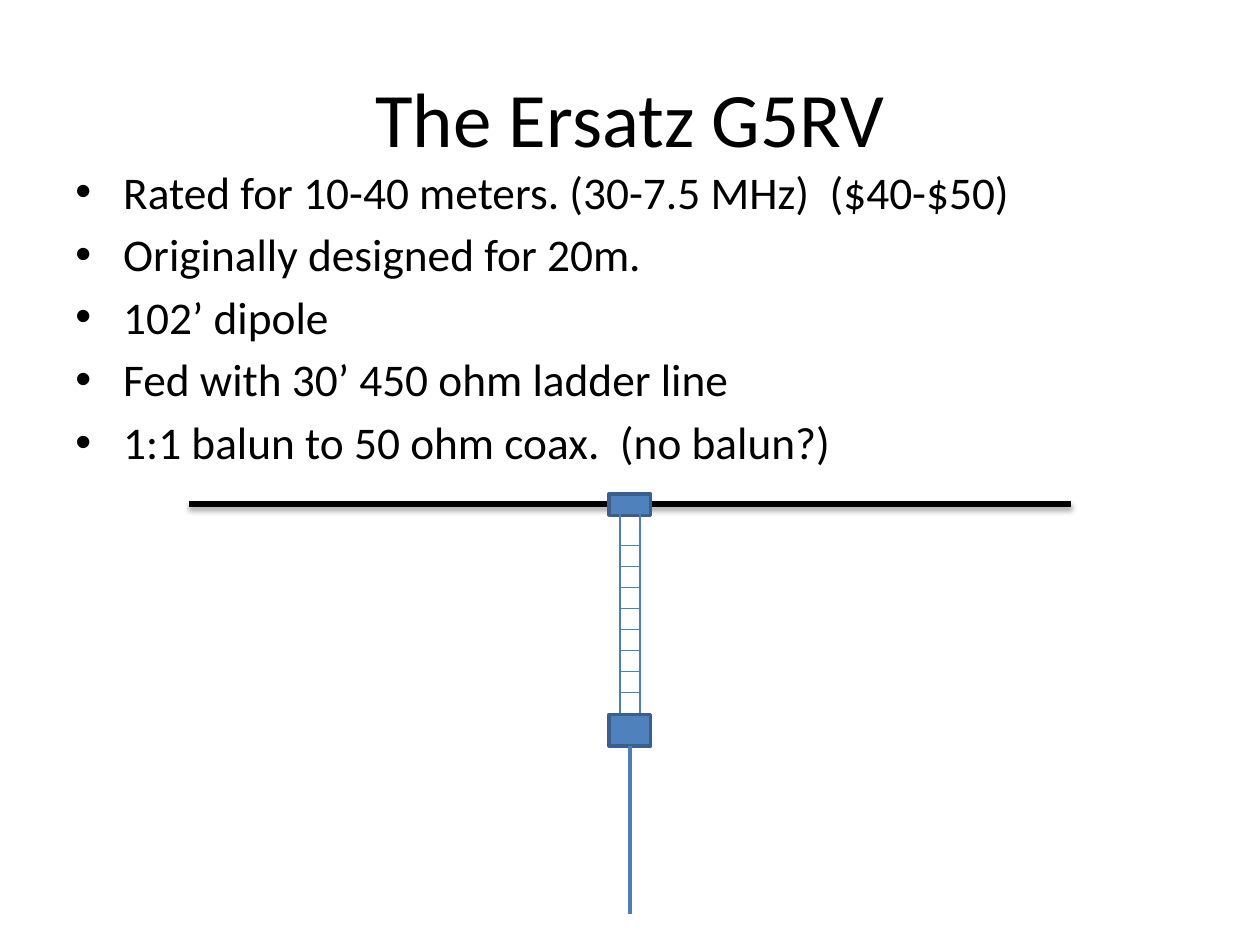
from lxml.etree import SubElement
from pptx import Presentation
from pptx.dml.color import RGBColor
from pptx.enum.shapes import MSO_CONNECTOR, MSO_SHAPE
from pptx.enum.text import MSO_ANCHOR, PP_ALIGN
from pptx.oxml.ns import qn
from pptx.util import Inches, Pt

TITLE = "The Ersatz G5RV"
FACTS = [
    "Rated for 10-40 meters. (30-7.5 MHz)  ($40-$50)",
    "Originally designed for 20m.",
    "102’ dipole",
    "Fed with 30’ 450 ohm ladder line",
    "1:1 balun to 50 ohm coax.  (no balun?)",
]
FONT = "Calibri"
BLACK = RGBColor(0, 0, 0)
FILL = RGBColor(0x4F, 0x81, 0xBD)
EDGE = RGBColor(0x3A, 0x5F, 0x8C)
WIRE = RGBColor(0x4B, 0x7E, 0xBC)

MID = 5
BOX_W = 0.33
RAILS = (4.92, 5.08)
RUNGS, RUNG_TOP, RUNG_GAP = 8, 4.33, 1 / 6


def write(shape, lines, size, align=PP_ALIGN.LEFT, anchor=MSO_ANCHOR.TOP,
          bullet=None, indent=0.38, before=0):
    frame = shape.text_frame
    frame.word_wrap = True
    frame.vertical_anchor = anchor
    for i, line in enumerate(lines):
        para = frame.paragraphs[0] if i == 0 else frame.add_paragraph()
        para.alignment = align
        para.space_before = Pt(before)
        run = para.add_run()
        run.text = line
        run.font.name = FONT
        run.font.size = Pt(size)
        run.font.color.rgb = BLACK
        if bullet:
            props = para._p.get_or_add_pPr()
            props.set("marL", str(Inches(indent)))
            props.set("indent", str(-Inches(indent)))
            SubElement(props, qn("a:buFont"), typeface="Arial")
            SubElement(props, qn("a:buChar"), char=bullet)


def place(shape, left, top, width, height):
    shape.left, shape.top = Inches(left), Inches(top)
    shape.width, shape.height = Inches(width), Inches(height)


def add_line(start, end, color=WIRE, width=0.75):
    line = slide.shapes.add_connector(
        MSO_CONNECTOR.STRAIGHT, *map(Inches, start + end))
    line.line.color.rgb = color
    line.line.width = Pt(width)
    SubElement(line._element.spPr, qn("a:effectLst"))
    return line


def add_shade(line):
    """Give a line a soft shadow straight below it."""
    effects = line._element.spPr.find(qn("a:effectLst"))
    shade = SubElement(effects, qn("a:outerShdw"), blurRad=str(Pt(3.1)),
                       dist=str(Pt(1.8)), dir="5400000", rotWithShape="0")
    color = SubElement(shade, qn("a:srgbClr"), val=str(BLACK))
    SubElement(color, qn("a:alpha"), val="35000")


def add_box(top, height):
    box = slide.shapes.add_shape(
        MSO_SHAPE.RECTANGLE, Inches(MID - BOX_W / 2), Inches(top),
        Inches(BOX_W), Inches(height))
    box.shadow.inherit = False
    box.fill.solid()
    box.fill.fore_color.rgb = FILL
    box.line.color.rgb = EDGE
    box.line.width = Pt(2)
    return box


deck = Presentation()
deck.slide_width, deck.slide_height = Inches(10), Inches(7.5)
slide = deck.slides.add_slide(deck.slide_layouts[5])

title = slide.shapes.title
place(title, 0.5, 0.3, 9, 1.25)
write(title, [TITLE], 44, align=PP_ALIGN.CENTER, anchor=MSO_ANCHOR.MIDDLE)

dipole = add_line((1.5, 4), (8.5, 4), BLACK, 3)
add_shade(dipole)
add_box(3.92, 0.17)
for x in RAILS:
    add_line((x, 5.75), (x, 4.08))
balun = add_box(5.67, 0.25)
coax = add_line((MID, 7.25), (MID, 5.92), width=2.5)
coax.end_connect(balun, 2)
for i in range(RUNGS):
    y = RUNG_TOP + i * RUNG_GAP
    add_line((RAILS[0], y), (RAILS[1], y))

facts = slide.shapes.add_textbox(
    Inches(0.5), Inches(1.25), Inches(9), Inches(2.42))
write(facts, FACTS, 25.9, bullet="•", before=4.7)

deck.save("out.pptx")
